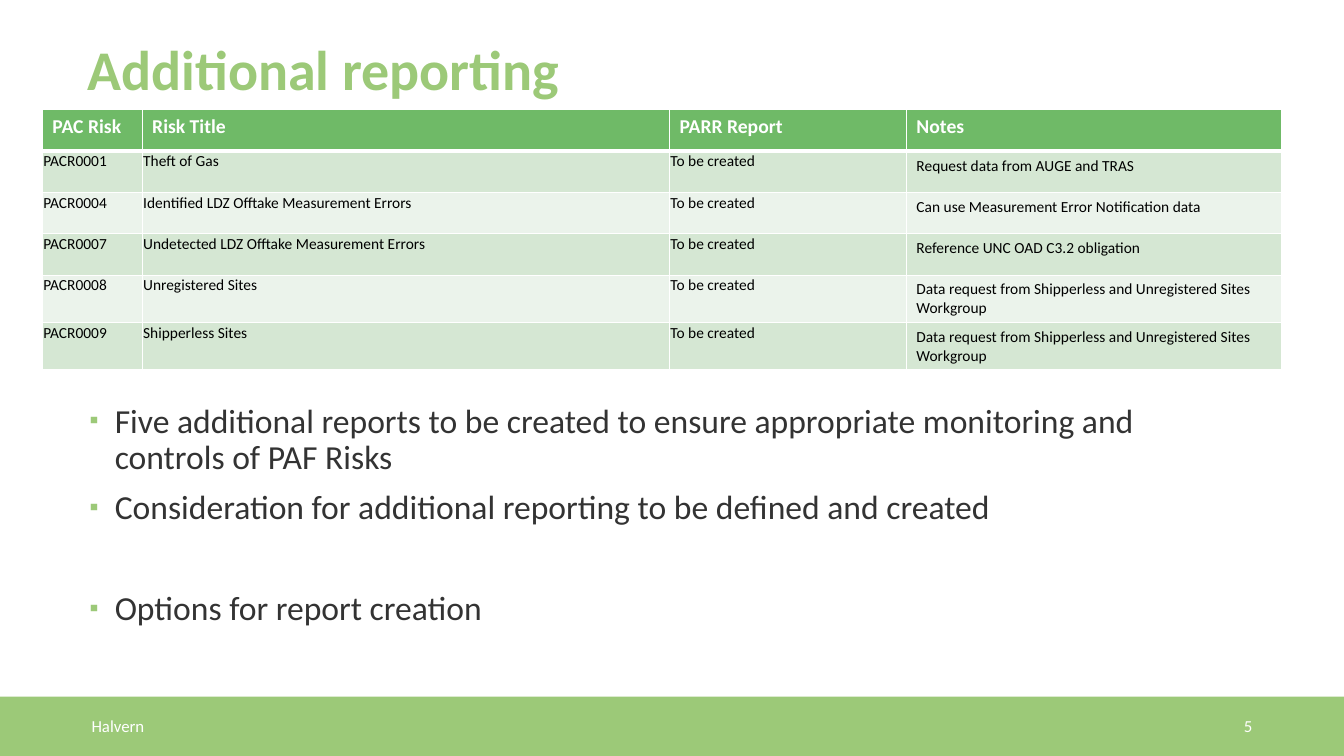
from lxml import etree
from pptx import Presentation
from pptx.dml.color import RGBColor
from pptx.enum.shapes import MSO_SHAPE
from pptx.enum.text import MSO_ANCHOR, MSO_AUTO_SIZE, PP_ALIGN
from pptx.oxml.ns import qn
from pptx.util import Inches, Pt

RECTANGLE = MSO_SHAPE.RECTANGLE
TOP, MIDDLE, BOTTOM = MSO_ANCHOR.TOP, MSO_ANCHOR.MIDDLE, MSO_ANCHOR.BOTTOM
LEFT, RIGHT = PP_ALIGN.LEFT, PP_ALIGN.RIGHT
NO_AUTOFIT = MSO_AUTO_SIZE.NONE

LEAF = RGBColor(0x9C, 0xC9, 0x78)
HEADER_GREEN = RGBColor(0x6F, 0xBA, 0x67)
BAND_DARK = RGBColor(0xD5, 0xE7, 0xD3)
BAND_LIGHT = RGBColor(0xEB, 0xF3, 0xEB)
CHARCOAL = RGBColor(0x33, 0x33, 0x33)
BLACK = RGBColor(0, 0, 0)
WHITE = RGBColor(0xFF, 0xFF, 0xFF)

FONT = "Calibri"
SLIDE_W, SLIDE_H = 13.33, 7.5

# Boxes: left, top, width, height in inches
TITLE_BOX = (0.77, 0.28, 11.25, 0.79)
RISKS_BOX = (0.42, 1.09, 12.3, 2.46)
POINTS_BOX = (0.79, 3.96, 11.5, 2.78)
FOOTER_BOX = (0, 6.91, SLIDE_W, 0.59)

COLUMN_SHARES = (0.08, 0.43, 0.19, 0.3)
COLUMN_WIDTHS = (0.99, 5.23, 2.35, 3.72)
HEADINGS = ("PAC Risk", "Risk Title", "PARR Report", "Notes")
REPORT_STATUS = "To be created"
WORKGROUP_NOTE = "Data request from Shipperless and Unregistered Sites Workgroup"
RISKS = (
    ("PACR0001", "Theft of Gas", "Request data from AUGE and TRAS"),
    ("PACR0004", "Identified LDZ Offtake Measurement Errors",
     "Can use Measurement Error Notification data"),
    ("PACR0007", "Undetected LDZ Offtake Measurement Errors",
     "Reference UNC OAD C3.2 obligation"),
    ("PACR0008", "Unregistered Sites", WORKGROUP_NOTE),
    ("PACR0009", "Shipperless Sites", WORKGROUP_NOTE),
)
# Each point with its space before, in points
POINTS = (
    ("Five additional reports to be created to ensure appropriate monitoring "
     "and controls of PAF Risks", 0),
    ("Consideration for additional reporting to be defined and created", 10),
    ("Options for report creation", 46.4),
)


def inches(box):
    return [Inches(length) for length in box]


def add_run(paragraph, text, size, color, bold=False):
    run = paragraph.add_run()
    run.text = text
    run.font.name = FONT
    run.font.size = Pt(size)
    run.font.bold = bold
    run.font.color.rgb = color


def add_text_frame(slide, box, anchor):
    frame = slide.shapes.add_textbox(*inches(box)).text_frame
    frame.word_wrap = True
    frame.vertical_anchor = anchor
    return frame


def add_title(slide, box):
    title = slide.shapes.title
    title.left, title.top, title.width, title.height = inches(box)
    frame = title.text_frame
    frame.auto_size = NO_AUTOFIT
    frame.vertical_anchor = BOTTOM
    heading = frame.paragraphs[0]
    heading.alignment = LEFT
    heading.line_spacing = 0.9
    add_run(heading, "Additional reporting", 40, LEAF, bold=True)


def set_borders(cell, top, bottom):
    properties = cell._tc.get_or_add_tcPr()
    for side, width in (("L", 1), ("R", 1), ("T", top), ("B", bottom)):
        line = etree.SubElement(properties, qn(f"a:ln{side}"), w=str(Pt(width)))
        fill = etree.SubElement(line, qn("a:solidFill"))
        etree.SubElement(fill, qn("a:srgbClr"), val=str(WHITE))


def add_risk_table(slide, box):
    rows = [HEADINGS] + [(code, risk, REPORT_STATUS, note) for code, risk, note in RISKS]
    table = slide.shapes.add_table(len(rows), len(HEADINGS), *inches(box)).table
    for column, width in zip(table.columns, COLUMN_WIDTHS):
        column.width = Inches(width)
    for r, row in enumerate(rows):
        is_header = r == 0
        band = HEADER_GREEN if is_header else BAND_DARK if r % 2 else BAND_LIGHT
        for c, text in enumerate(row):
            cell = table.cell(r, c)
            set_borders(cell, top=3 if r == 1 else 1, bottom=3 if is_header else 1)
            cell.fill.solid()
            cell.fill.fore_color.rgb = band
            cell.vertical_anchor = TOP
            # Only the notes column keeps the default cell margins
            if not is_header and c < len(row) - 1:
                cell.margin_left = cell.margin_right = cell.margin_top = Inches(0.01)
                cell.margin_bottom = 0
            add_run(cell.text_frame.paragraphs[0], text, 14 if is_header else 11,
                    WHITE if is_header else BLACK, bold=is_header)


def set_bullet(paragraph):
    properties = paragraph._p.get_or_add_pPr()
    properties.set("marL", str(Inches(0.25)))
    properties.set("indent", str(-Inches(0.25)))
    color = etree.SubElement(properties, qn("a:buClr"))
    etree.SubElement(color, qn("a:srgbClr"), val=str(LEAF))
    etree.SubElement(properties, qn("a:buSzPct"), val="75000")
    etree.SubElement(properties, qn("a:buFont"), typeface=FONT)
    etree.SubElement(properties, qn("a:buChar"), char="▪")


def add_points(slide, box):
    frame = add_text_frame(slide, box, TOP)
    for i, (text, space_before) in enumerate(POINTS):
        point = frame.add_paragraph() if i else frame.paragraphs[0]
        set_bullet(point)
        point.line_spacing = 0.9
        point.space_before = Pt(space_before)
        add_run(point, text, 24, CHARCOAL)


def add_footer(slide, box):
    left, top, width, height = box
    band = slide.shapes.add_shape(RECTANGLE, *inches(box))
    band.shadow.inherit = False
    band.fill.solid()
    band.fill.fore_color.rgb = LEAF
    band.line.fill.background()
    # Company name on the left, page number on the right
    for text, offset, label_width, alignment in (
            ("Halvern", 0.81, 4.5, LEFT), ("5", width - 3.81, 3, RIGHT)):
        label_box = (left + offset, top + 0.09, label_width, height - 0.19)
        label = add_text_frame(slide, label_box, MIDDLE).paragraphs[0]
        label.alignment = alignment
        add_run(label, text, 12, WHITE)


def main():
    deck = Presentation()
    deck.slide_width, deck.slide_height = Inches(SLIDE_W), Inches(SLIDE_H)
    slide = deck.slides.add_slide(deck.slide_layouts[5])
    add_footer(slide, FOOTER_BOX)
    add_title(slide, TITLE_BOX)
    add_points(slide, POINTS_BOX)
    add_risk_table(slide, RISKS_BOX)
    deck.save("out.pptx")


if __name__ == "__main__":
    main()
